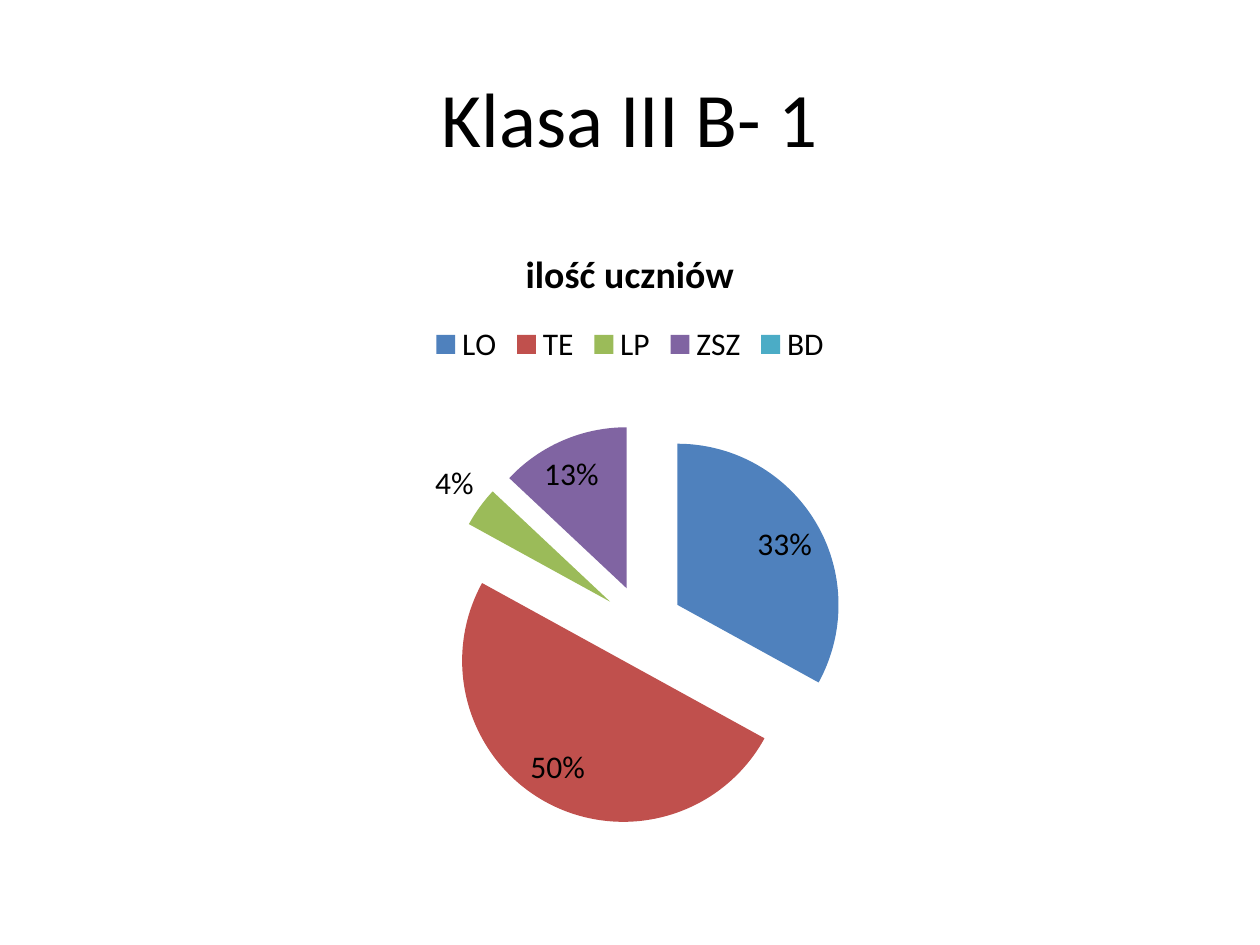
from lxml import etree
from pptx import Presentation
from pptx.chart.data import CategoryChartData
from pptx.dml.color import RGBColor
from pptx.enum.chart import XL_CHART_TYPE, XL_LABEL_POSITION, XL_LEGEND_POSITION
from pptx.enum.text import MSO_ANCHOR, PP_ALIGN
from pptx.oxml.ns import qn
from pptx.util import Cm, Pt

PIE = XL_CHART_TYPE.PIE
BEST_FIT = XL_LABEL_POSITION.BEST_FIT
LEGEND_TOP = XL_LEGEND_POSITION.TOP
MIDDLE = MSO_ANCHOR.MIDDLE
CENTER = PP_ALIGN.CENTER

FONT = "Calibri"
BLACK = "000000"
LEFT, WIDTH = Cm(1.27), Cm(22.86)
# school type, share of pupils in percent, slice colour
SCHOOLS = [
    ("LO", 33, "4F81BD"),
    ("TE", 50, "C0504D"),
    ("LP", 4, "9BBB59"),
    ("ZSZ", 13, "8064A2"),
    ("BD", 0, "4BACC6"),
]


def color(hex_string):
    return RGBColor.from_string(hex_string)


def style_font(font, size, bold=False):
    font.name = FONT
    font.size = Pt(size)
    font.bold = bold
    font.color.rgb = color(BLACK)


def add_title(slide, text):
    text_frame = slide.shapes.add_textbox(LEFT, Cm(0.76), WIDTH, Cm(3.18)).text_frame
    text_frame.word_wrap = True
    text_frame.vertical_anchor = MIDDLE
    text_frame.text = text
    paragraph = text_frame.paragraphs[0]
    paragraph.alignment = CENTER
    style_font(paragraph.runs[0].font, 44)


def explode_slices(series, percent):
    explosion = etree.Element(qn("c:explosion"), val=str(percent))
    series._element.find(qn("c:tx")).addnext(explosion)


def hide_label(data_labels, index):
    label = etree.Element(qn("c:dLbl"))
    etree.SubElement(label, qn("c:idx"), val=str(index))
    etree.SubElement(label, qn("c:delete"), val="1")
    data_labels._element.insert(0, label)


def add_percent_labels(plot, series):
    plot.vary_by_categories = True
    labels = series.data_labels
    labels.show_percentage = True
    labels.show_value = False
    labels.number_format = "0%"
    labels.number_format_is_linked = False
    labels.position = BEST_FIT
    style_font(labels.font, 18)
    for index, (_, share, _) in enumerate(SCHOOLS):
        if share == 0:
            hide_label(labels, index)


def add_pie_chart(slide, title):
    chart_data = CategoryChartData()
    chart_data.categories = [name for name, _, _ in SCHOOLS]
    chart_data.add_series(title, [share for _, share, _ in SCHOOLS])
    chart = slide.shapes.add_chart(
        PIE, LEFT, Cm(4.45), WIDTH, Cm(12.57), chart_data
    ).chart
    style_font(chart.font, 18)

    chart.has_title = True
    chart.chart_title.text_frame.text = title
    title_run = chart.chart_title.text_frame.paragraphs[0].runs[0]
    style_font(title_run.font, 21.6, bold=True)

    chart.has_legend = True
    chart.legend.position = LEGEND_TOP
    chart.legend.include_in_layout = False
    style_font(chart.legend.font, 18)

    plot = chart.plots[0]
    series = plot.series[0]
    explode_slices(series, 25)
    for index, (_, _, slice_color) in enumerate(SCHOOLS):
        fill = series.points[index].format.fill
        fill.solid()
        fill.fore_color.rgb = color(slice_color)
    add_percent_labels(plot, series)


def main():
    presentation = Presentation()
    presentation.slide_width = Cm(25.4)
    presentation.slide_height = Cm(19.05)
    slide = presentation.slides.add_slide(presentation.slide_layouts[6])
    add_title(slide, "Klasa III B- 1")
    add_pie_chart(slide, "ilość uczniów")
    presentation.save("out.pptx")


if __name__ == "__main__":
    main()
